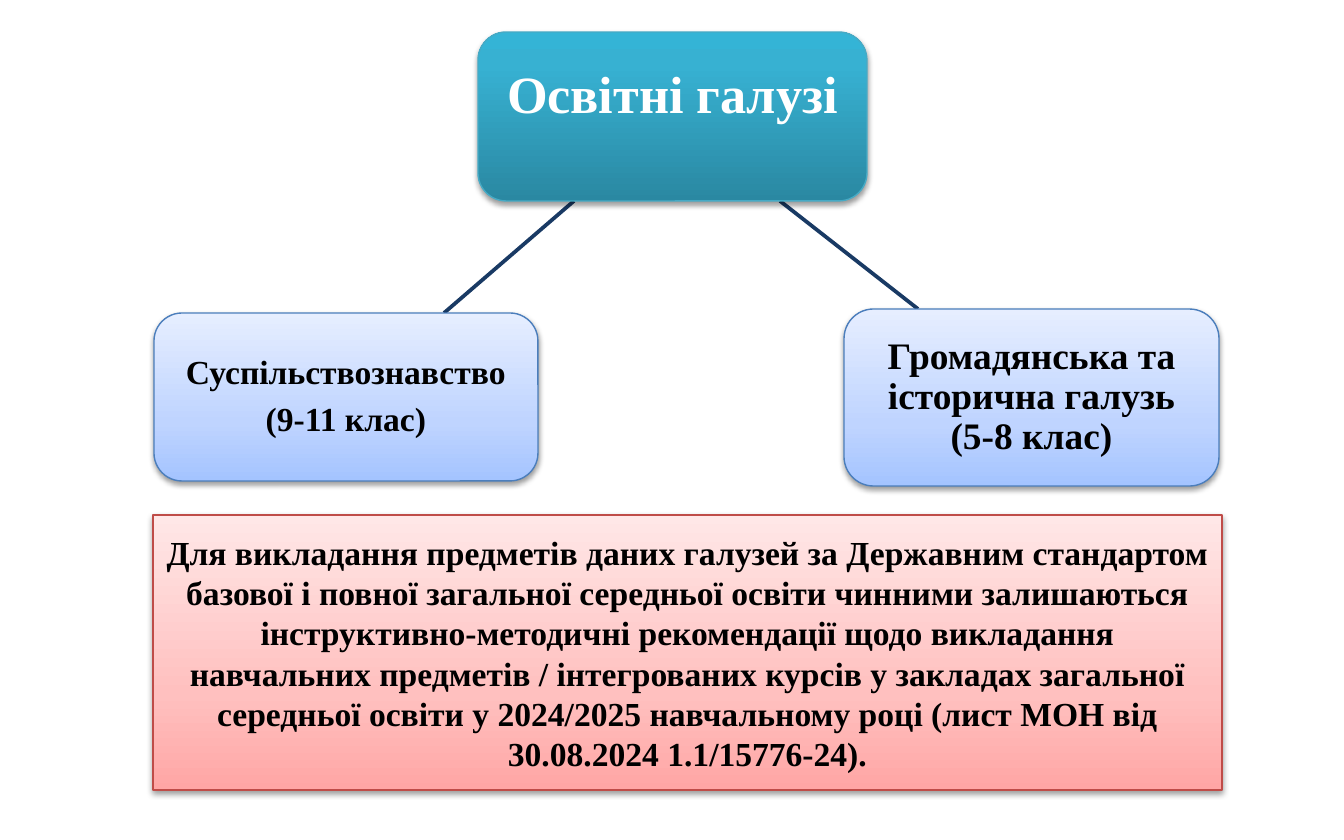
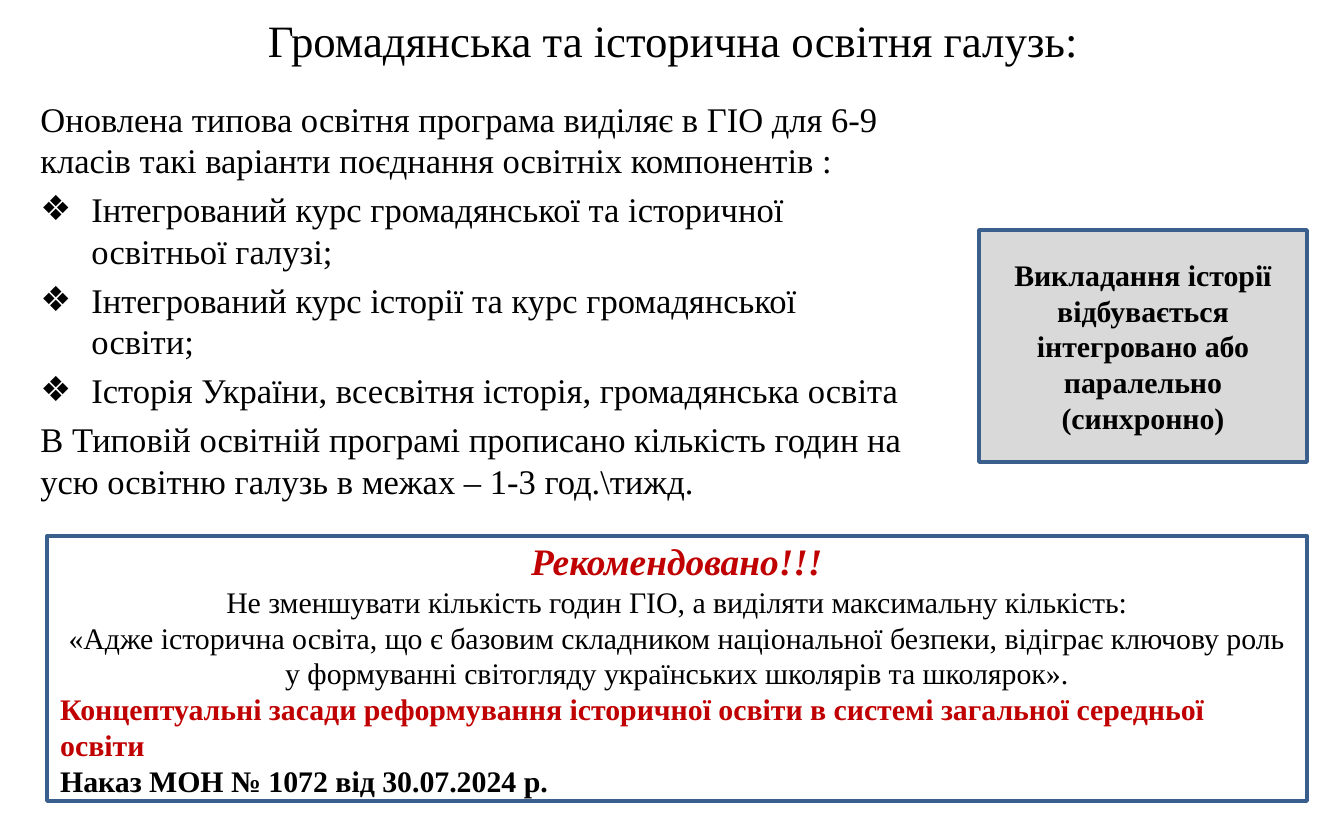
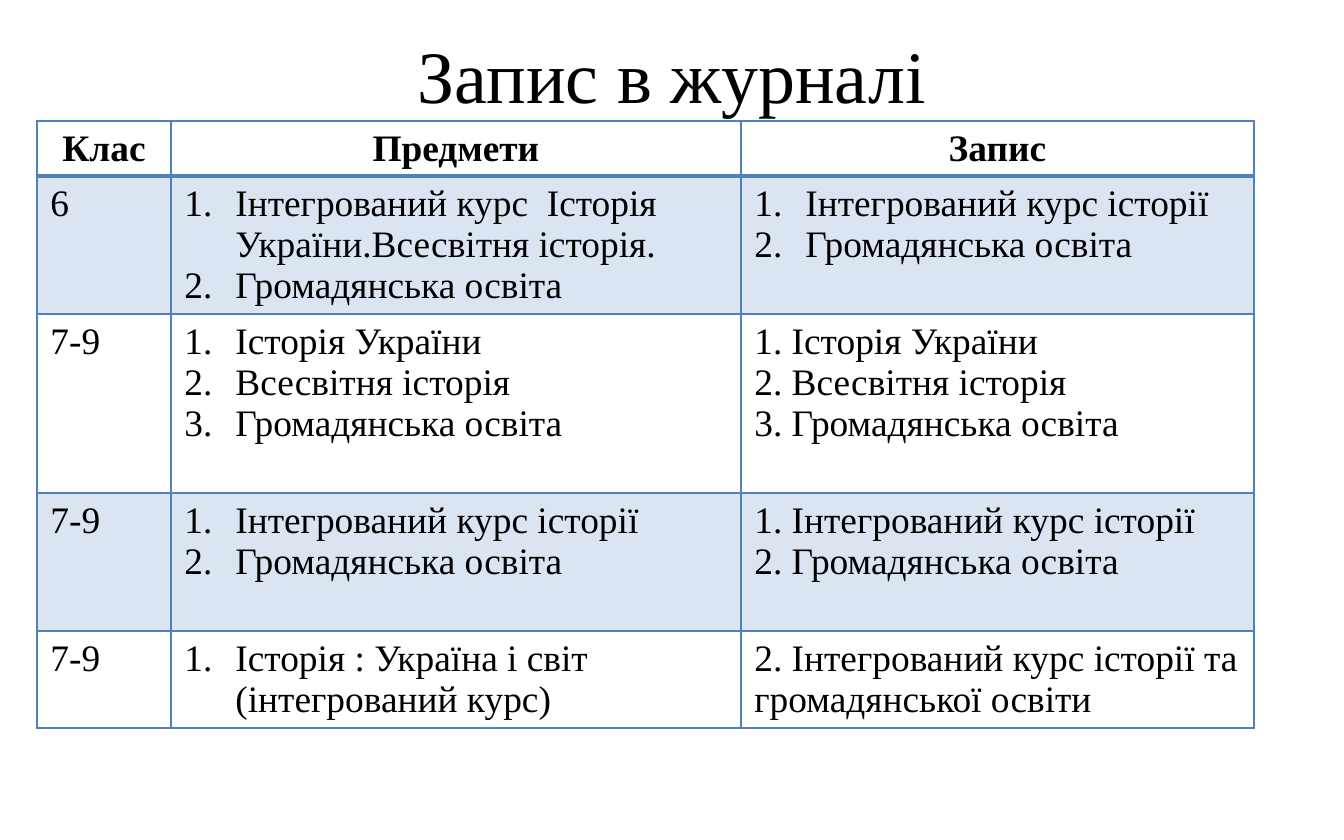
from lxml import etree
from pptx import Presentation
from pptx.dml.color import RGBColor
from pptx.enum.shapes import MSO_CONNECTOR, MSO_SHAPE
from pptx.enum.text import MSO_ANCHOR, MSO_AUTO_SIZE, PP_ALIGN
from pptx.oxml.ns import qn
from pptx.util import Emu, Pt

ROUNDED, RECTANGLE = MSO_SHAPE.ROUNDED_RECTANGLE, MSO_SHAPE.RECTANGLE
STRAIGHT = MSO_CONNECTOR.STRAIGHT
LEFT, CENTER = PP_ALIGN.LEFT, PP_ALIGN.CENTER
MIDDLE = MSO_ANCHOR.MIDDLE
NO_FIT = MSO_AUTO_SIZE.NONE

SCALE = 914400 / 134.4
FONT = "Times New Roman"
GRID_STYLE = "{5940675A-B579-460E-94D1-54222C63F5DA}"
COLORS = {
    "black": "000000", "white": "FFFFFF", "red": "C00000", "gray": "D9D9D9",
    "frame": "3A5F8C", "branch": "193A64", "grid": "4F81BD",
    "teal_line": "46AAC5", "blue_line": "4B7EBC", "rose_line": "BF4C48",
}
GRADIENTS = {
    "teal": ((0, "2A88A2"), (80, "37B1D2"), (100, "34B4D6")),
    "blue": ((0, "A4C4FF"), (35, "BFD4FF"), (100, "E6EEFF")),
    "rose": ((0, "FFA6A5"), (35, "FFC0BF"), (100, "FFE7E7")),
}

NOTE = ("Для викладання предметів даних галузей за Державним стандартом базової і повної "
        "загальної середньої освіти чинними залишаються інструктивно-методичні рекомендації "
        "щодо викладання навчальних предметів / інтегрованих курсів у закладах загальної "
        "середньої освіти у 2024/2025 навчальному році (лист МОН від 30.08.2024 1.1/15776-24).")
PROGRAM = [
    ("Оновлена типова освітня програма виділяє в ГІО для 6-9 класів такі варіанти "
     "поєднання освітніх компонентів :", False),
    ("Інтегрований курс громадянської та історичної освітньої галузі;", True),
    ("Інтегрований курс історії та курс громадянської освіти;", True),
    ("Історія України, всесвітня історія, громадянська освіта", True),
    ("В Типовій освітній програмі прописано кількість годин на усю освітню галузь "
     "в межах – 1-3 год.\\тижд.", False),
]
ADVICE = [
    ("Рекомендовано!!!",
     {"size": 20, "color": "red", "bold": True, "italic": True}),
    ("Не зменшувати кількість годин ГІО, а виділяти максимальну кількість:", {"size": 16}),
    ("«Адже історична освіта, що є базовим складником національної безпеки, відіграє "
     "ключову роль у формуванні світогляду українських школярів та школярок».", {"size": 16}),
    ("Концептуальні засади реформування історичної освіти в системі загальної "
     "середньої освіти", {"size": 16, "color": "red", "bold": True, "align": LEFT}),
    ("Наказ МОН № 1072 від 30.07.2024 р.", {"size": 16, "bold": True, "align": LEFT}),
]
COLUMN_WIDTHS = (134, 570, 513)
ROW_HEIGHTS = (55, 138, 179, 138, 97)
JOURNAL = [
    ("Клас", "Предмети", "Запис"),
    ("6",
     ["Інтегрований курс  Історія України.Всесвітня історія.", "Громадянська освіта"],
     ["Інтегрований курс історії", "Громадянська освіта"]),
    ("7-9",
     ["Історія України", "Всесвітня історія", "Громадянська освіта"],
     "1. Історія України\n2. Всесвітня історія\n3. Громадянська освіта"),
    ("7-9",
     ["Інтегрований курс історії", "Громадянська освіта"],
     "1. Інтегрований курс історії\n2. Громадянська освіта"),
    ("7-9",
     ["Історія : Україна і світ (інтегрований курс)"],
     "2. Інтегрований курс історії та громадянської освіти"),
]


def px(length):
    """Turn pixels into EMU."""
    return Emu(round(length * SCALE))


def rgb(name):
    """Return a palette colour."""
    return RGBColor.from_string(COLORS[name])


def add_node(parent, tag, **attributes):
    """Append a DrawingML element with the given attributes."""
    names = {key: str(value) for key, value in attributes.items()}
    return etree.SubElement(parent, qn(tag), names)


def format_para(para, size, color="black", bold=False, italic=False, align=CENTER):
    """Give a paragraph its alignment and its runs their font."""
    para.alignment = align
    for span in para.runs:
        font = span.font
        font.name, font.size = FONT, Pt(size)
        font.bold, font.italic = bold, italic
        font.color.rgb = rgb(color)


def set_bullet(para, tag, indent=51, **attributes):
    """Set a paragraph's bullet and hanging indent."""
    properties = para._p.get_or_add_pPr()
    properties.set("marL", str(px(indent)))
    properties.set("indent", str(-px(indent)))
    add_node(properties, tag, **attributes)


def place(shape, box):
    """Move a shape to a pixel box."""
    shape.left, shape.top, shape.width, shape.height = map(px, box)


def add_title(page, box, text, size):
    """Fill and place the title placeholder."""
    title = page.shapes.title
    place(title, box)
    frame = title.text_frame
    frame.text = text
    frame.auto_size, frame.vertical_anchor = NO_FIT, MIDDLE
    format_para(frame.paragraphs[0], size)


def add_panel(page, box, kind, line, weight, paras):
    """Add an outlined shape with styled paragraphs."""
    panel = page.shapes.add_shape(kind, *map(px, box))
    panel.shadow.inherit = False
    panel.fill.background()
    panel.line.color.rgb, panel.line.width = rgb(line), Pt(weight)
    frame = panel.text_frame
    frame.word_wrap, frame.vertical_anchor = True, MIDDLE
    frame.text = "\n".join(text for text, style in paras)
    for para, (text, style) in zip(frame.paragraphs, paras):
        format_para(para, **style)
    return panel


def add_glossy_panel(page, box, kind, tone, lines, size, color="black"):
    """Add a panel with a gradient and a soft shadow below."""
    style = {"size": size, "color": color, "bold": True}
    panel = add_panel(page, box, kind, tone + "_line", 0.75, [(text, style) for text in lines])
    panel.fill.gradient()
    panel.fill.gradient_angle = 90
    properties = panel._element.spPr
    stops = properties.find(".//" + qn("a:gsLst"))
    stops.clear()
    for percent, shade in GRADIENTS[tone]:
        stop = add_node(stops, "a:gs", pos=percent * 1000)
        add_node(stop, "a:srgbClr", val=shade)
    shadow = add_node(properties.find(qn("a:effectLst")), "a:outerShdw", blurRad=Pt(3.1),
                      dist=Pt(1.6), dir=5400000, rotWithShape=0)
    add_node(add_node(shadow, "a:srgbClr", val=COLORS["black"]), "a:alpha", val=38000)
    return panel


def add_branch(page, start, end):
    """Draw a line of the tree."""
    branch = page.shapes.add_connector(STRAIGHT, *map(px, start + end))
    branch.line.color.rgb, branch.line.width = rgb("branch"), Pt(2)
    add_node(branch._element.spPr, "a:effectLst")


def add_field_tree(page, box):
    """Draw the root field with its two branches."""
    left, top, width, height = box
    root_bottom = top + 169
    for start, end in (((302, 169), (764, 277)), ((96, 169), (290, 281))):
        start_x = left + 324 + start[0]
        end_x = left + (end[0] if end[0] > 300 else 290)
        add_branch(page, (start_x, root_bottom), (end_x, top + end[1]))
    root = add_glossy_panel(page, (left + 324, top, 389, 169), ROUNDED, "teal",
                            ["Освітні галузі"], 28, "white")
    root.text_frame.margin_bottom = px(55)
    leaves = [
        ((left, top + 281, 384, 168), ["Суспільствознавство", "(9-11 клас)"], 18),
        ((left + width - 375, top + 277, 375, 177),
         ["Громадянська та історична галузь (5-8 клас)"], 20),
    ]
    for leaf_box, lines, size in leaves:
        leaf = add_glossy_panel(page, leaf_box, ROUNDED, "blue", lines, size)
        for para in leaf.text_frame.paragraphs:
            para.line_spacing, para.space_after = 0.9, Pt(6)


def add_program(page, box):
    """Fill the body placeholder with the programme options."""
    body = page.placeholders[1]
    place(body, box)
    frame = body.text_frame
    frame.auto_size = NO_FIT
    frame.text = "\n".join(text for text, bulleted in PROGRAM)
    for para, (text, bulleted) in zip(frame.paragraphs, PROGRAM):
        format_para(para, 18.5, align=LEFT)
        para.space_before = Pt(4)
        if bulleted:
            set_bullet(para, "a:buChar", char="❖")
        else:
            set_bullet(para, "a:buNone", indent=0)


def add_borders(cell, widths):
    """Draw the left, right, top and bottom borders of a cell."""
    properties = cell._tc.get_or_add_tcPr()
    for index, (side, width) in enumerate(zip("LRTB", widths)):
        border = add_node(properties, "a:ln" + side, w=Pt(width))
        add_node(add_node(border, "a:solidFill"), "a:srgbClr", val=COLORS["grid"])
        properties.insert(index, border)


def fill_cell(cell, content, row):
    """Write one journal cell and style it by its row."""
    numbered = isinstance(content, list)
    cell.text_frame.text = "\n".join(content) if numbered else content
    for para in cell.text_frame.paragraphs:
        format_para(para, 20, bold=row == 0, align=LEFT if row else CENTER)
        if numbered:
            set_bullet(para, "a:buAutoNum", type="arabicPeriod")
    if row % 2:
        cell.fill.solid()
        cell.fill.fore_color.rgb = rgb("grid")
        color = cell._tc.tcPr.find(".//" + qn("a:srgbClr"))
        add_node(color, "a:alpha", val=20000)
    else:
        cell.fill.background()
    add_borders(cell, (1, 1, 2 if row == 1 else 1, 2 if row == 0 else 1))


def add_journal(page, left, top):
    """Add the journal table."""
    box = (left, top, sum(COLUMN_WIDTHS), sum(ROW_HEIGHTS))
    table = page.shapes.add_table(len(ROW_HEIGHTS), len(COLUMN_WIDTHS), *map(px, box)).table
    table.first_row = table.horz_banding = False
    table._tbl.tblPr.find(qn("a:tableStyleId")).text = GRID_STYLE
    for column, width in zip(table.columns, COLUMN_WIDTHS):
        column.width = px(width)
    for row, height in enumerate(ROW_HEIGHTS):
        table.rows[row].height = px(height)
        for column, content in enumerate(JOURNAL[row]):
            fill_cell(table.cell(row, column), content, row)


def build_fields(deck):
    """Build the slide of educational fields."""
    page = deck.slides.add_slide(deck.slide_layouts[6])
    add_field_tree(page, (154, 32, 1065, 454))
    add_glossy_panel(page, (153, 515, 1069, 275), RECTANGLE, "rose", [NOTE], 18)


def build_program(deck):
    """Build the slide of programme options and advice."""
    page = deck.slides.add_slide(deck.slide_layouts[1])
    add_title(page, (68, 0, 1210, 80), "Громадянська та історична освітня галузь:", 24)
    add_program(page, (27, 91, 888, 423))
    add_panel(page, (47, 536, 1260, 265), RECTANGLE, "frame", 2, ADVICE)
    remark = "Викладання історії відбувається інтегровано або паралельно (синхронно)"
    side = add_panel(page, (979, 230, 328, 232), RECTANGLE, "frame", 2,
                     [(remark, {"size": 16, "bold": True})])
    side.fill.solid()
    side.fill.fore_color.rgb = rgb("gray")


def build_journal(deck):
    """Build the slide of journal entries."""
    page = deck.slides.add_slide(deck.slide_layouts[5])
    add_title(page, (67, 34, 1210, 80), "Запис в журналі", 39.6)
    add_journal(page, 37, 121)


def main():
    """Build and save the deck."""
    deck = Presentation()
    deck.slide_width, deck.slide_height = px(1344), px(840)
    build_fields(deck)
    build_program(deck)
    build_journal(deck)
    deck.save("out.pptx")


if __name__ == "__main__":
    main()
